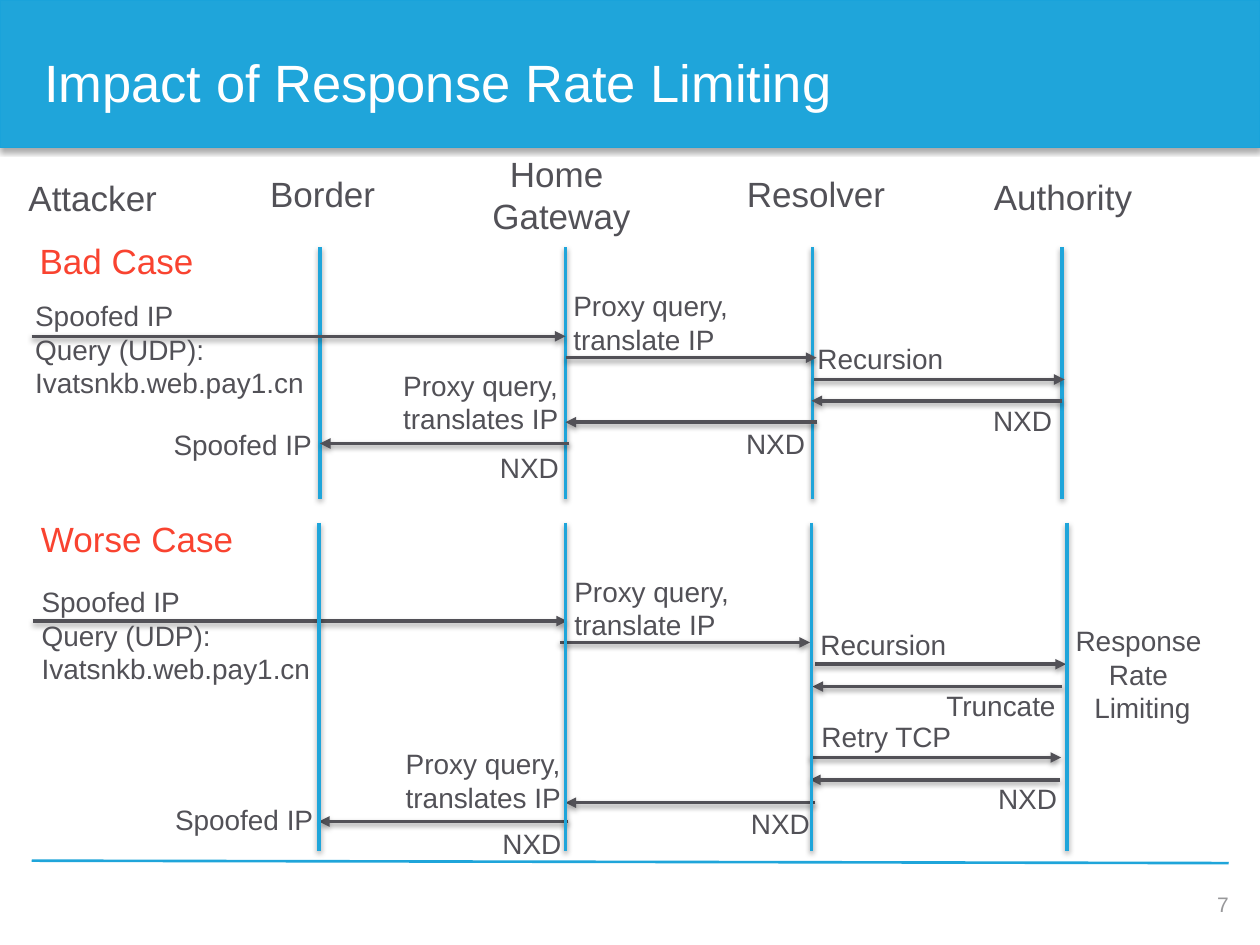
import pptx
import pptx.util
import pptx.dml.color
import pptx.enum.shapes
import pptx.enum.text
import pptx.oxml

Cm = pptx.util.Cm
Pt = pptx.util.Pt
ALIGN = pptx.enum.text.PP_ALIGN
ANCHOR = pptx.enum.text.MSO_ANCHOR
NS = "http://schemas.openxmlformats.org/drawingml/2006/main"

INK = {"blue": "1FA5DA", "edge": "1AA3DA", "dark": "525157",
       "red": "F94330", "grey": "98989A", "white": "FFFFFF"}

FRAME = {"margin_left": 0, "margin_right": 0, "margin_top": 0,
         "margin_bottom": 0, "word_wrap": False,
         "auto_size": pptx.enum.text.MSO_AUTO_SIZE.SHAPE_TO_FIT_TEXT}
FIXED = {"word_wrap": True, "vertical_anchor": ANCHOR.MIDDLE,
         "auto_size": pptx.enum.text.MSO_AUTO_SIZE.NONE}

HEADS = [
    ("Attacker", 0.56, 3.56, 2.62),
    ("Border", 5.44, 3.48, 2.13),
    ("Home \nGateway", 9.91, 3.07, 2.82),
    ("Resolver", 15.04, 3.48, 2.82),
    ("Authority", 20.02, 3.53, 2.82),
]
CASES = [
    ("Bad Case", 0.79, 4.83, 3.12),
    ("Worse Case", 0.81, 10.44, 3.91),
]

BAD_LANES = [6.45, 11.4, 16.38, 21.41]
WORSE_LANES = [6.43, 11.4, 16.36, 21.51]
BAD_STEPS = [
    (0.64, 11.4, 6.78), (11.4, 16.46, 7.21), (16.41, 21.46, 7.65),
    (21.41, 16.36, 8.08), (16.46, 11.4, 8.51), (11.48, 6.45, 8.94),
]
WORSE_STEPS = [
    (0.66, 11.43, 12.52), (11.28, 16.33, 12.95), (16.43, 21.49, 13.39),
    (21.41, 16.38, 13.84), (16.33, 21.39, 15.27), (21.36, 16.33, 15.72),
    (16.43, 11.4, 16.18), (11.46, 6.43, 16.56),
]

NOTES = [
    ("Spoofed IP\nQuery (UDP):\nIvatsnkb.web.pay1.cn", 5.49,
     [(0.71, 6.02), (0.84, 11.79)]),
    ("Proxy query,\ntranslate IP", 3.18, [(11.56, 5.82), (11.58, 11.58)]),
    ("Recursion", 2.57, [(16.48, 6.88), (16.54, 12.65)]),
    ("Truncate", 2.24, [(19.08, 13.89)]),
    ("Retry TCP", 2.64, [(16.56, 14.5)]),
    ("NXD", 1.19, [(20.02, 8.13), (15.04, 8.59), (10.08, 9.09),
                   (20.12, 15.75), (15.14, 16.26), (10.13, 16.66)]),
    ("Proxy query,\ntranslates IP", 3.18, [(8.13, 7.42), (8.18, 15.06)]),
    ("Spoofed IP", 2.82, [(3.5, 8.61), (3.53, 16.18)]),
]


def tint(name):
    return pptx.dml.color.RGBColor.from_string(INK[name])


def apply(item, form):
    for key, value in form.items():
        setattr(item, key, value)


def shade(shape, alpha=38, dist=1.6):
    props = shape._element.spPr
    for old in props.findall(f"{{{NS}}}effectLst"):
        props.remove(old)
    props.append(pptx.oxml.parse_xml(
        f'<a:effectLst xmlns:a="{NS}"><a:outerShdw blurRad="{Pt(3.1)}" '
        f'dist="{Pt(dist)}" dir="5400000" rotWithShape="0">'
        f'<a:srgbClr val="000000"><a:alpha val="{alpha * 1000}"/></a:srgbClr>'
        f'</a:outerShdw></a:effectLst>'))


def add_line(slide, start, end, color, width=2, arrow=False, cast=True):
    line = slide.shapes.add_connector(
        pptx.enum.shapes.MSO_CONNECTOR.STRAIGHT,
        *[Cm(n) for n in (*start, *end)])
    line.line.color.rgb = tint(color)
    line.line.width = Pt(width)
    if arrow:
        line.line._get_or_add_ln().append(pptx.oxml.parse_xml(
            f'<a:tailEnd xmlns:a="{NS}" type="triangle"/>'))
    if cast:
        shade(line)
    else:
        line._element.spPr.append(
            pptx.oxml.parse_xml(f'<a:effectLst xmlns:a="{NS}"/>'))


def add_text(slide, words, x, y, wide, size, color="dark",
             align=ALIGN.LEFT, high=None, form=None):
    high = high or size * 0.0425 * len(words.split("\n"))
    box = slide.shapes.add_textbox(Cm(x), Cm(y), Cm(wide), Cm(high))
    frame = box.text_frame
    frame.text = words
    apply(frame, {**FRAME, **(form or {})})
    for para in frame.paragraphs:
        para.alignment = align
        for run in para.runs:
            apply(run.font, {"name": "Arial", "size": Pt(size)})
            run.font.color.rgb = tint(color)
    return frame


def add_base(slide):
    band = slide.shapes.add_shape(
        pptx.enum.shapes.MSO_SHAPE.RECTANGLE, 0, 0, Cm(25.4), Cm(2.97))
    band.fill.solid()
    band.fill.fore_color.rgb = tint("blue")
    band.line.color.rgb = tint("edge")
    band.line.width = Pt(0.75)
    shade(band, 35, 1.8)
    add_line(slide, (0.64, 17.35), (24.77, 17.4), "blue", 1.5, cast=False)
    add_text(slide, "7", 18.85, 18.03, 5.92, 12, "grey", ALIGN.RIGHT,
             0.38, FIXED)
    inset = {"margin_left": Cm(0.25), "margin_right": Cm(0.25)}
    title = add_text(slide, "Impact of Response Rate Limiting", 0.64, 0.66,
                     24.16, 30, "white", high=2.11, form={**FIXED, **inset})
    title.paragraphs[0].line_spacing = 0.9


def add_lanes(slide, lanes, top, base):
    for x in lanes:
        add_line(slide, (x, top), (x, base), "blue")


def add_steps(slide, steps):
    for start, end, y in steps:
        add_line(slide, (start, y), (end, y), "dark", arrow=True)


def main():
    deck = pptx.Presentation()
    apply(deck, {"slide_width": Cm(25.4), "slide_height": Cm(19.05)})
    slide = deck.slides.add_slide(deck.slide_layouts[6])
    add_base(slide)
    add_lanes(slide, BAD_LANES, 4.98, 10.06)
    add_steps(slide, BAD_STEPS + WORSE_STEPS)
    add_lanes(slide, WORSE_LANES, 10.54, 17.15)
    for words, x, y, wide in HEADS:
        add_text(slide, words, x, y, wide, 20, align=ALIGN.CENTER)
    for words, x, y, wide in CASES:
        add_text(slide, words, x, y, wide, 20, "red", ALIGN.CENTER)
    for words, wide, spots in NOTES:
        for x, y in spots:
            add_text(slide, words, x, y, wide, 16)
    add_text(slide, "Response \nRate \nLimiting", 21.67, 12.57, 2.72, 16,
             align=ALIGN.CENTER)
    deck.save("out.pptx")


if __name__ == "__main__":
    main()
